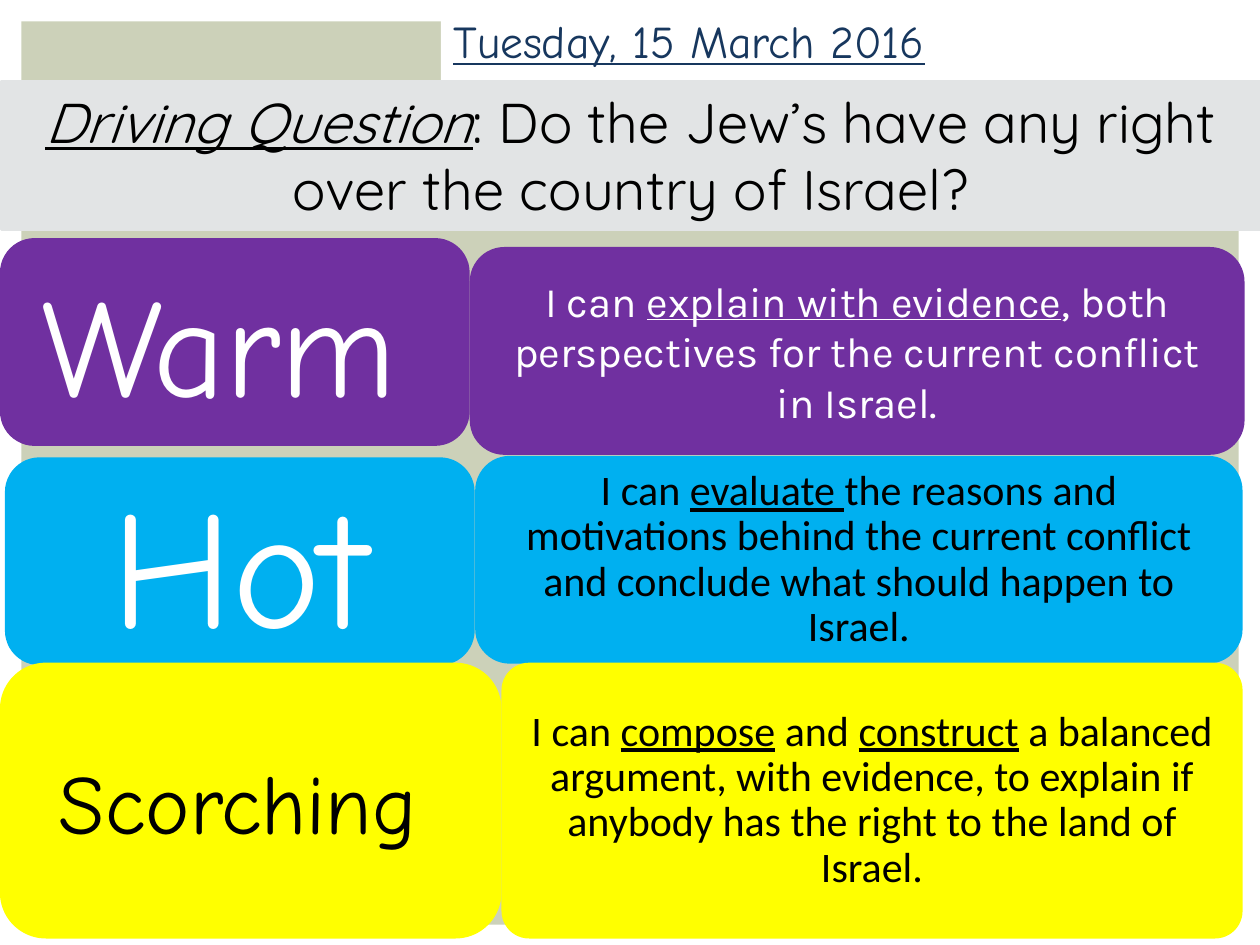
"""Build a lesson slide with a driving question and three levels of challenge."""
import pptx
import pptx.dml.color
import pptx.enum.shapes
import pptx.enum.text
import pptx.util

Cm = pptx.util.Cm
Pt = pptx.util.Pt
RGBColor = pptx.dml.color.RGBColor
Shape = pptx.enum.shapes.MSO_SHAPE
Align = pptx.enum.text.PP_ALIGN
Anchor = pptx.enum.text.MSO_ANCHOR

WHITE = RGBColor(0xFF, 0xFF, 0xFF)
BLACK = RGBColor(0x00, 0x00, 0x00)
NAVY = RGBColor(0x17, 0x37, 0x5E)
SAGE = RGBColor(0xCC, 0xD1, 0xB9)
GREY = RGBColor(0xE2, 0xE4, 0xE5)
PURPLE = RGBColor(0x70, 0x30, 0xA0)
BLUE = RGBColor(0x00, 0xB0, 0xF0)
YELLOW = RGBColor(0xFF, 0xFF, 0x00)

PLAIN, UNDERLINED = False, True

LEVELS = [
    {
        "fill": PURPLE,
        "label": ((0, 4.8, 9.47, 4.19), [("Warm", 80), (" ", 54)], WHITE),
        "goal": ((9.47, 4.98, 15.62, 4.19), "Karla", WHITE, 1.0, [
            ("I can ", PLAIN), ("explain with evidence", UNDERLINED),
            (", both perspectives for the current conflict in Israel.", PLAIN)]),
    },
    {
        "fill": BLUE,
        "label": ((0.1, 9.22, 9.47, 4.19), [("Hot", 96)], WHITE),
        "goal": ((9.58, 9.19, 15.47, 4.19), "Calibri", BLACK, 0.9, [
            ("I can ", PLAIN), ("evaluate ", UNDERLINED),
            ("the reasons and motivations behind the current conflict "
             "and conclude what should happen to Israel.", PLAIN)]),
    },
    {
        "fill": YELLOW,
        "label": ((0, 13.36, 10.11, 5.56), [("Scorching", 48), (" ", 44)], BLACK),
        "goal": ((10.11, 13.36, 14.94, 5.56), "Calibri", BLACK, 0.9, [
            ("I can ", PLAIN), ("compose", UNDERLINED), (" and ", PLAIN),
            ("construct", UNDERLINED),
            (" a balanced argument, with evidence, to explain if "
             "anybody has the right to the land of Israel.", PLAIN)]),
        "goal_corner": 0.1,
    },
]


class LessonSlide:
    """Hold the lesson style and the slide being built."""

    label_font = "Comic Neue"
    title_font = "Quicksand"
    goal_size = 24

    def __init__(self, presentation):
        self.slide = presentation.slides.add_slide(presentation.slide_layouts[5])

    def box(self, kind, bounds, fill):
        """Add a plain filled shape without a line."""
        shape = self.slide.shapes.add_shape(kind, *map(Cm, bounds))
        shape.shadow.inherit = False
        shape.fill.solid()
        shape.fill.fore_color.rgb = fill
        shape.line.fill.background()
        return shape

    def style(self, shape, name, color, size=None, align=Align.CENTER, anchor=Anchor.MIDDLE):
        """Format the only paragraph of a shape and return it."""
        frame = shape.text_frame
        frame.word_wrap = True
        frame.vertical_anchor = anchor
        paragraph = frame.paragraphs[0]
        paragraph.alignment = align
        paragraph.font.name = name
        paragraph.font.color.rgb = color
        if size:
            paragraph.font.size = Pt(size)
        return paragraph

    def run(self, paragraph, text, underline=False):
        """Append a run of text and return it."""
        run = paragraph.add_run()
        run.text = text
        if underline:
            run.font.underline = True
        return run

    def title(self, bounds, heading, question):
        """Fill the title placeholder and bring it to the front."""
        shape = self.slide.shapes.title
        shape.left, shape.top, shape.width, shape.height = map(Cm, bounds)
        shape.fill.solid()
        shape.fill.fore_color.rgb = GREY
        shape.line.color.rgb = GREY
        shape.line.width = Pt(1.5)
        shape.text_frame.auto_size = pptx.enum.text.MSO_AUTO_SIZE.NONE
        paragraph = self.style(shape, self.title_font, BLACK, 32, anchor=Anchor.TOP)
        self.run(paragraph, heading, UNDERLINED).font.italic = True
        self.run(paragraph, question)
        shape.element.getparent().append(shape.element)

    def date(self, bounds, text):
        """Add the underlined date."""
        shape = self.box(Shape.RECTANGLE, bounds, WHITE)
        paragraph = self.style(shape, self.label_font, NAVY, 26, Align.LEFT)
        self.run(paragraph, text, UNDERLINED)

    def label(self, fill, bounds, parts, color):
        """Add the name of a level."""
        shape = self.box(Shape.ROUNDED_RECTANGLE, bounds, fill)
        paragraph = self.style(shape, self.label_font, color)
        for text, size in parts:
            self.run(paragraph, text).font.size = Pt(size)

    def goal(self, fill, corner, bounds, font, color, spacing, parts):
        """Add the learning goal of a level."""
        shape = self.box(Shape.ROUNDED_RECTANGLE, bounds, fill)
        if corner:
            shape.adjustments[0] = corner
        paragraph = self.style(shape, font, color, self.goal_size)
        paragraph.line_spacing = spacing
        for text, underline in parts:
            self.run(paragraph, text, underline)


def main():
    """Create and save the presentation."""
    presentation = pptx.Presentation()
    presentation.slide_width, presentation.slide_height = Cm(25.4), Cm(19.05)
    lesson = LessonSlide(presentation)
    lesson.box(Shape.RECTANGLE, (0.43, 0.43, 24.54, 18.21), SAGE)
    for level in LEVELS:
        lesson.goal(level["fill"], level.get("goal_corner"), *level["goal"])
        lesson.label(level["fill"], *level["label"])
    lesson.date((8.89, 0, 16.21, 1.63), "Tuesday, 15 March 2016")
    lesson.title((0.03, 1.63, 25.37, 3), "Driving Question",
                 ": Do the Jew’s have any right over the country of Israel?")
    presentation.save("out.pptx")


if __name__ == "__main__":
    main()
